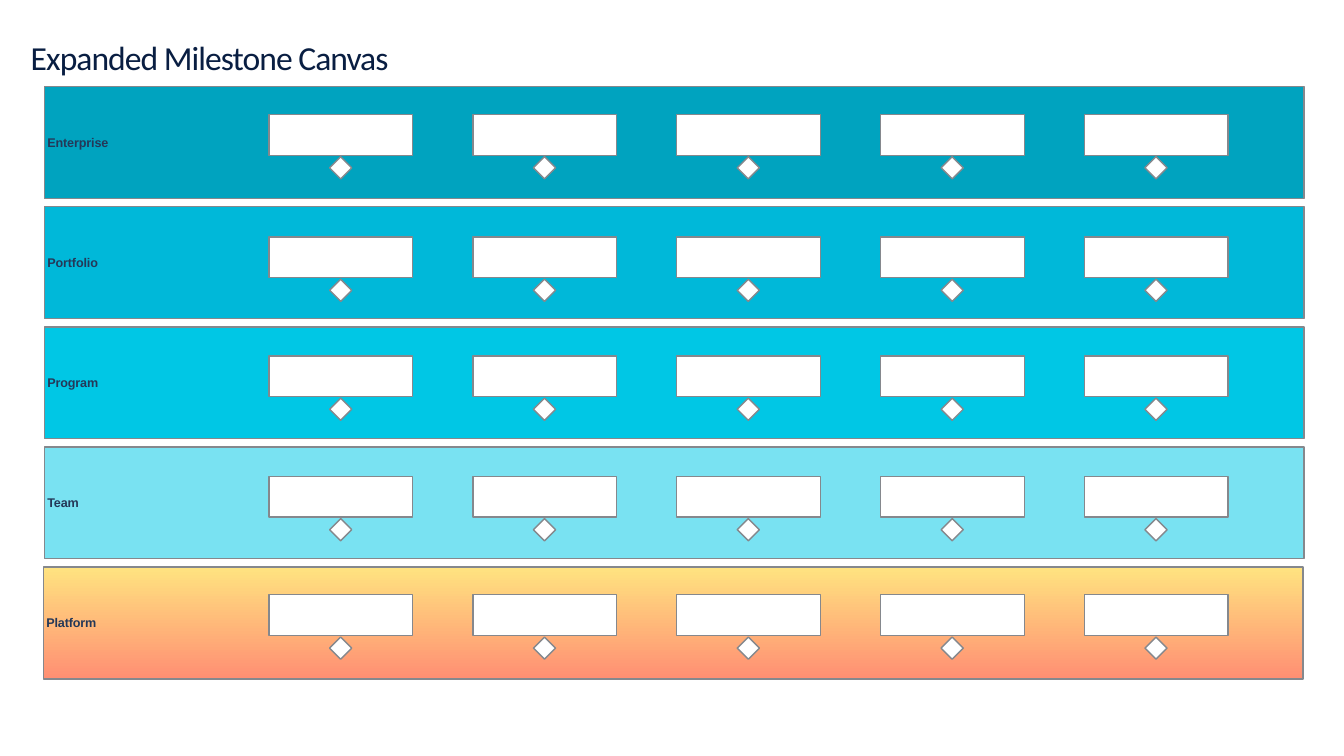
"""Build the Expanded Milestone Canvas slide: five lanes with five milestones each."""
from pptx import Presentation
from pptx.dml.color import RGBColor
from pptx.enum.shapes import MSO_SHAPE as SHAPE
from pptx.enum.text import MSO_ANCHOR as ANCHOR, PP_ALIGN as ALIGN
from pptx.util import Inches, Pt

COLORS = {
    "title": "091E42", "label": "253858", "line": "85888D", "white": "FFFFFF",
    "enterprise": "00A3BF", "portfolio": "00B8D9", "program": "00C7E5",
    "team": "79E2F2", "platform_top": "FFE380", "platform_bottom": "FF8F73",
}
LANES = [
    ("Enterprise", ["enterprise"], 0.88, 2.27),
    ("Portfolio", ["portfolio"], 0.88, 4.7),
    ("Program", ["program"], 0.88, 7.06),
    ("Team", ["team"], 0.88, 9.45),
    ("Platform", ["platform_top", "platform_bottom"], 0.86, 11.8),
]
LANE_TOP, LANE_PITCH = 1.72, (11.25 - 1.72) / 4
BOX_LEFT, BOX_PITCH = 5.34, (21.52 - 5.34) / 4


def rgb(name):
    return RGBColor.from_string(COLORS[name])


def add_item(s, x, y, w, h, kind=None, fills=("white",), text="", size=18, font="Arial",
             color="label", bold=False, spacing=0, inset=0, indent=0, anchor=ANCHOR.MIDDLE):
    box = [Inches(v) for v in (x, y, w, h)]
    if kind is None:
        sp = s.shapes.add_textbox(*box)
    else:
        sp = s.shapes.add_shape(kind, *box)
        sp.shadow.inherit = False
        if len(fills) == 1:
            sp.fill.solid()
            sp.fill.fore_color.rgb = rgb(fills[0])
        else:
            sp.fill.gradient()
            sp.fill.gradient_angle = 270
            for stop, name in zip(sp.fill.gradient_stops, fills):
                stop.color.rgb = rgb(name)
        sp.line.color.rgb = rgb("line")
        sp.line.width = Pt(2)
    if text:
        tf = sp.text_frame
        tf.word_wrap = True
        tf.vertical_anchor = anchor
        tf.margin_left = tf.margin_right = tf.margin_top = tf.margin_bottom = Inches(inset)
        p = tf.paragraphs[0]
        p.alignment = ALIGN.LEFT
        p._p.get_or_add_pPr().set("indent", str(Inches(indent)))
        r = p.add_run()
        r.text = text
        r.font.name, r.font.size, r.font.bold = font, Pt(size), bold
        r.font.color.rgb = rgb(color)
        r._r.get_or_add_rPr().set("spc", str(spacing))


prs = Presentation()
prs.slide_width, prs.slide_height = Inches(26.67), Inches(15)
s = prs.slides.add_slide(prs.slide_layouts[6])

add_item(s, 0.55, 0.67, 25.11, 1.37, text="Expanded Milestone Canvas", size=48, font="Calibri",
         color="title", spacing=-140, inset=0.06, anchor=ANCHOR.TOP)

for row, (label, fills, left, box_top) in enumerate(LANES):
    add_item(s, left, LANE_TOP + row * LANE_PITCH, 25, 2.22, SHAPE.RECTANGLE, fills,
             text=label, bold=True, spacing=-20, indent=0.06)
    for col in range(5):
        x = BOX_LEFT + col * BOX_PITCH
        add_item(s, x + 1.2, box_top + 0.84, 0.44, 0.44, SHAPE.DIAMOND)
        add_item(s, x, box_top, 2.85, 0.81, SHAPE.RECTANGLE)

prs.save("out.pptx")
